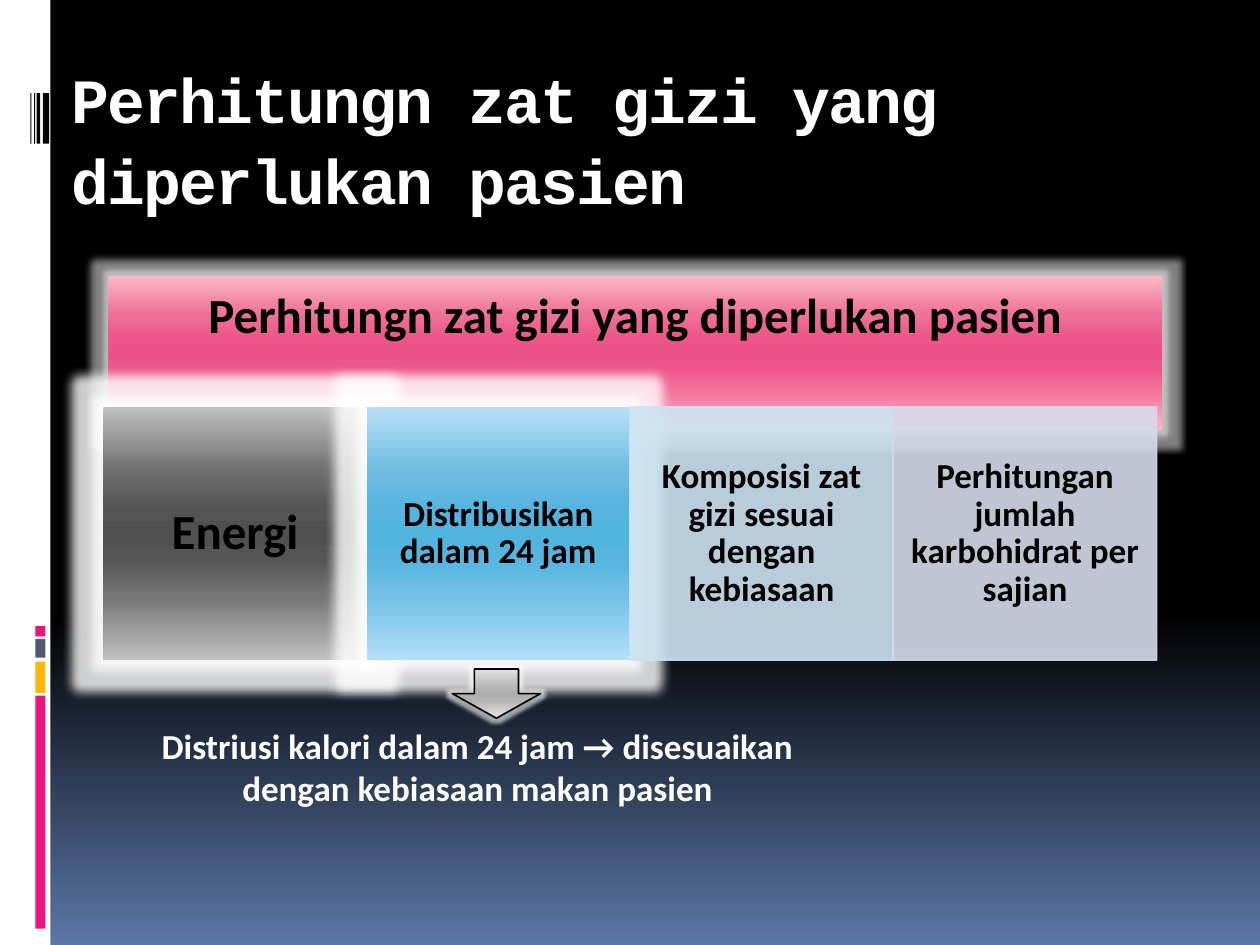
from lxml import etree
from pptx import Presentation, util as u
from pptx.dml.color import RGBColor
from pptx.enum import shapes, text
from pptx.oxml.ns import qn

THEME = {
    "heading_font": "Courier New", "body_font": "Calibri",
    "title_size": 36, "large": 28, "small": 20,
    "light": "FFFFFF", "dark": "000000", "pink": "EA157A",
    "amber": "FEB80A", "slate": "4E5B6F",
    "backdrop": [(0, "000000"), (65, "000000"), (100, "5B77A8")],
    "rose": list(zip((0, 25, 40, 50, 60, 75, 100),
                     ("FFB6C9", "ED7198", "EC568B", "EC5289", "EC568B", "F2729A", "FFB6C9"))),
    "grey": list(zip((0, 25, 40, 50, 60, 75, 100),
                     ("C0C0C0", "707070", "555555", "505050", "555555", "767676", "C0C0C0"))),
    "blue": list(zip((0, 25, 40, 50, 60, 75, 100),
                     ("B7DFF8", "70BCE2", "55B5DF", "50B4DF", "55B5DF", "72C0E7", "B4DFFB"))),
    "silver": list(zip((0, 40, 50, 65, 100),
                       ("E1E1E1", "B4B4B4", "ADADAD", "B4B4B4", "E7E7E7"))),
    "pale_blue": "CCE3F2", "pale_violet": "D5DAEB",
}
W, H = 10, 7.5
TITLE = "Perhitungn zat gizi yang diperlukan pasien"
STEPS = [
    ("Energi", "large", "grey"),
    ("Distribusikan dalam 24 jam", "small", "blue"),
    ("Komposisi zat gizi sesuai dengan kebiasaan", "small", "pale_blue"),
    ("Perhitungan jumlah karbohidrat per sajian", "small", "pale_violet"),
]
NOTE = "Distriusi kalori dalam 24 jam → disesuaikan dengan kebiasaan makan pasien"
SIDE_BLOCKS = [(5.52, 1.85, "pink"), (5.25, 0.25, "amber"),
               (5.07, 0.15, "slate"), (4.97, 0.08, "pink")]
BARCODE = [(0.34, 0.05), (0.29, 0.03), (0.27, 0.01), (0.24, 0.01)]
GRID_LEFT, GRID_TOP, COL, ROW = 0.82, 3.23, 2.09, 2.01
HEADER = (0.86, 2.19, 8.36, 1.22)

deck = Presentation()
deck.slide_width, deck.slide_height = u.Inches(W), u.Inches(H)
slide = deck.slides.add_slide(deck.slide_layouts[6])


def blend(fill, element, stops):
    fill.gradient()
    fill.gradient_angle = 270
    stop_list = next(element.iter(qn("a:gsLst")))
    for old in list(stop_list):
        stop_list.remove(old)
    for share, color in stops:
        stop = etree.SubElement(stop_list, qn("a:gs"), pos=str(share * 1000))
        etree.SubElement(stop, qn("a:srgbClr"), val=color)


def block(box, paint, kind=shapes.MSO_SHAPE.RECTANGLE, outline=None, alpha=100, glow=None):
    part = slide.shapes.add_shape(kind, *map(u.Inches, box))
    part.shadow.inherit = False
    if isinstance(THEME[paint], list):
        blend(part.fill, part._element.spPr, THEME[paint])
    else:
        part.fill.solid()
        part.fill.fore_color.rgb = RGBColor.from_string(THEME[paint])
    if outline:
        part.line.color.rgb = RGBColor.from_string(THEME[outline])
        part.line.width = u.Pt(0.94)
    else:
        part.line.fill.background()
    if alpha < 100:
        for color in part._element.spPr.iter(qn("a:srgbClr")):
            etree.SubElement(color, qn("a:alpha"), val=str(alpha * 1000))
    if glow:
        radius, strength = glow
        effects = part._element.spPr.find(qn("a:effectLst"))
        halo = etree.SubElement(effects, qn("a:glow"), rad=str(u.Inches(radius)))
        color = etree.SubElement(halo, qn("a:srgbClr"), val=THEME["light"])
        etree.SubElement(color, qn("a:alpha"), val=str(strength * 1000))
    return part


def write(part, words, size, color, font="body_font", insets=(0.1, 0.05), spacing=1,
          align=text.PP_ALIGN.CENTER, anchor=text.MSO_ANCHOR.MIDDLE):
    frame = part.text_frame
    frame.word_wrap = True
    frame.vertical_anchor = anchor
    frame.margin_left = frame.margin_right = u.Inches(insets[0])
    frame.margin_top = frame.margin_bottom = u.Inches(insets[1])
    paragraph = frame.paragraphs[0]
    paragraph.text = words
    paragraph.alignment = align
    paragraph.line_spacing = spacing
    paragraph.font.name = THEME[font]
    paragraph.font.size = u.Pt(THEME[size])
    paragraph.font.bold = True
    paragraph.font.color.rgb = RGBColor.from_string(THEME[color])
    return paragraph


def label(box, *args, **options):
    return write(slide.shapes.add_textbox(*map(u.Inches, box)), *args, **options)


blend(slide.background.fill, slide._element, THEME["backdrop"])
block((0, 0, 0.4, H), "light")
for top, height, paint in SIDE_BLOCKS:
    block((0.28, top, 0.08, height), paint)
for left, width in BARCODE:
    block((left, 0.74, width, 0.4), "dark")

block(HEADER, "rose", glow=(0.1, 50))
label((*HEADER[:3], 0.66), TITLE, "large", "dark", insets=(0.16, 0.16), spacing=0.9)

for column, (words, size, paint) in enumerate(STEPS):
    box = (GRID_LEFT + column * COL, GRID_TOP, COL, ROW)
    if isinstance(THEME[paint], list):
        step = block(box, paint, glow=(0.17, 80))
    else:
        step = block(box, paint, outline=paint, alpha=90)
    write(step, words, size, "dark", insets=(0.09, 0.02), spacing=0.9)

heading = label((0.47, 0.31, 9.53, 1), TITLE, "title_size", "light", font="heading_font",
                insets=(0.1, 0.12), spacing=1.08, align=text.PP_ALIGN.LEFT,
                anchor=text.MSO_ANCHOR.TOP)
heading.runs[0].font._element.set("spc", "-100")
label((0.94, 5.7, 5.7, 0.77), NOTE, "small", "light", anchor=text.MSO_ANCHOR.TOP)
block((3.59, 5.31, 0.7, 0.39), "silver", shapes.MSO_SHAPE.DOWN_ARROW,
      outline="dark", glow=(0.06, 60))

deck.save("out.pptx")
